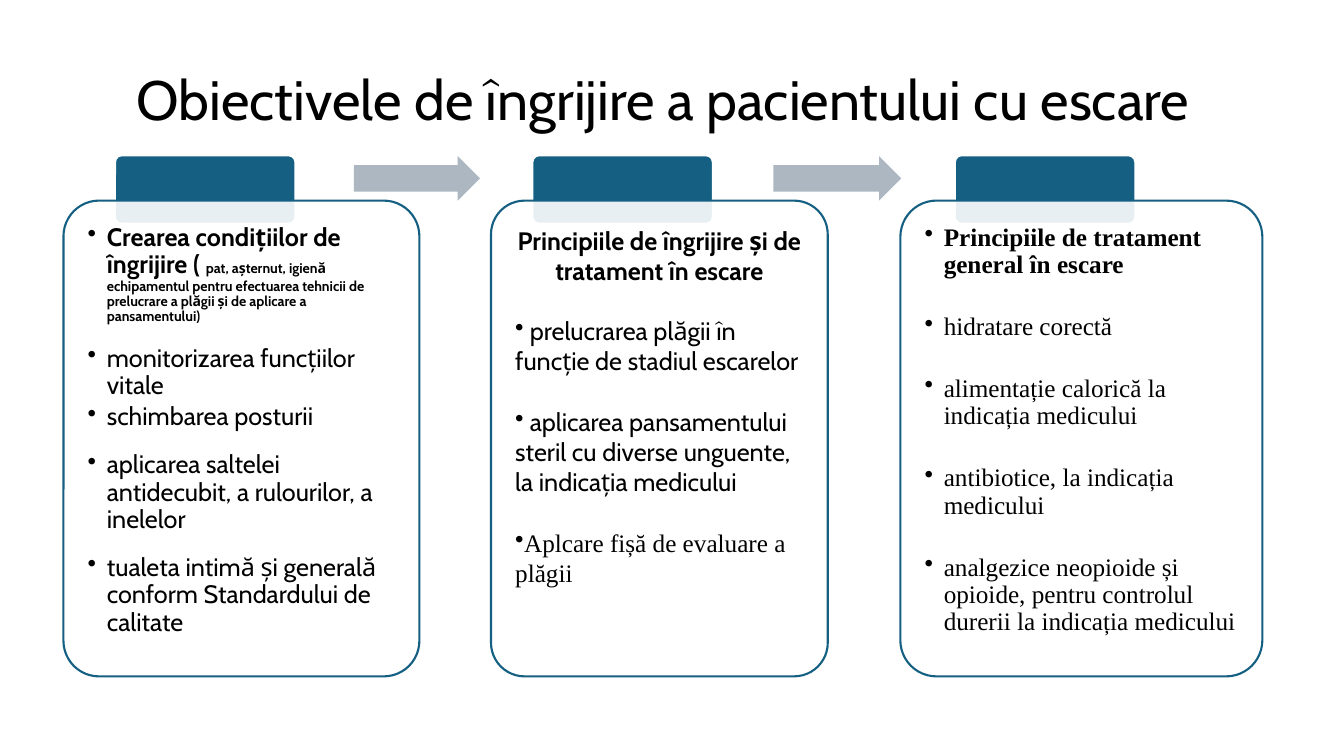
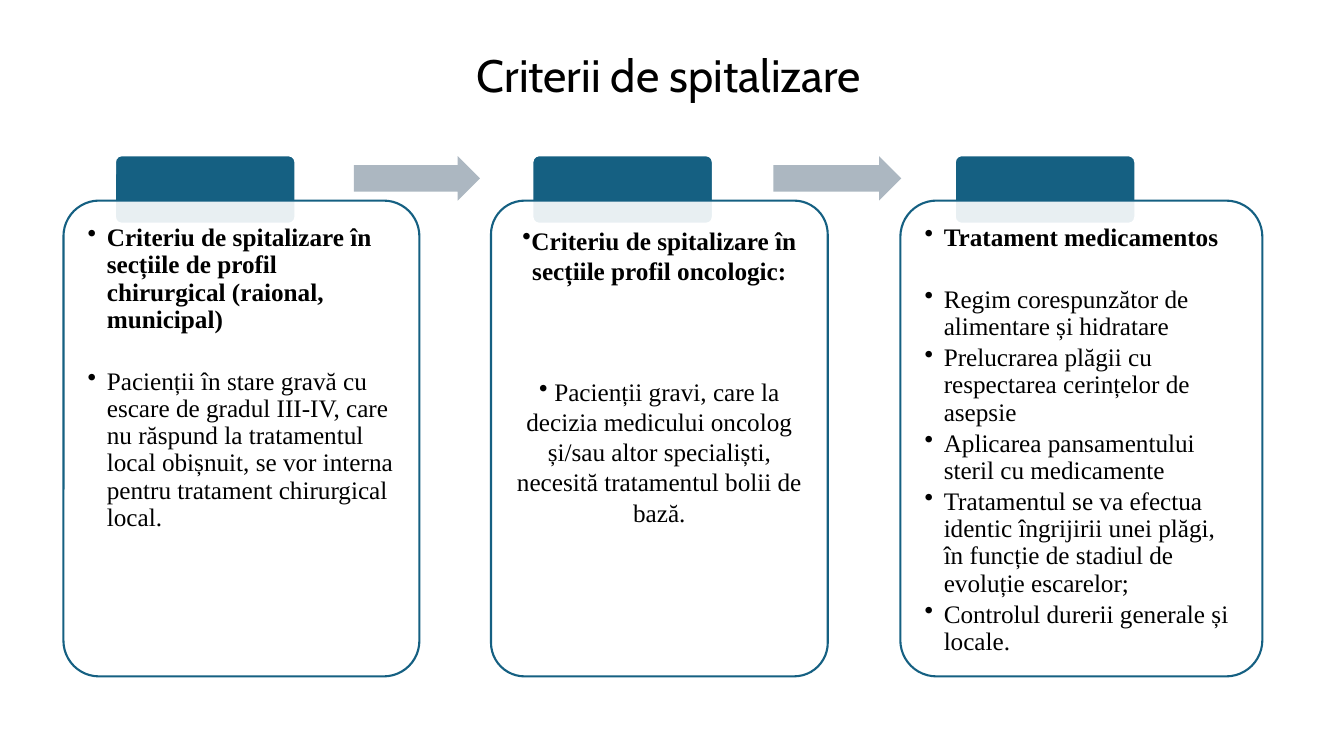
"""Build two slides on pressure ulcer care, each a row of three linked cards."""
from dataclasses import dataclass
from typing import Any

import pptx
import pptx.dml.color
import pptx.enum.shapes
import pptx.enum.text
import pptx.oxml
import pptx.oxml.ns
import pptx.shapes.autoshape
import pptx.slide
import pptx.text.text
import pptx.util

EMU_PER_PX = 9144
COLORS = {"text": "000000", "teal": "156082", "card": "FFFFFF", "arrow": "ACB7C1"}
SANS, SERIF = "Cabin", "Times New Roman"
LEFT = pptx.enum.text.PP_ALIGN.LEFT
CENTER = pptx.enum.text.PP_ALIGN.CENTER
PRESET = pptx.enum.shapes.MSO_SHAPE

CARD_TOP, CARD_HEIGHT, CARD_PADDING = 199, 472, 10
TAB_TOP, TAB_WIDTH, TAB_HEIGHT = 154, 179, 68
ARROW_TOP, ARROW_HEIGHT = 155, 44
TITLE_WIDTH, TITLE_HEIGHT = 1095, 80
BODY_SIZE, DETAIL_SIZE = 18, 10
TIGHT, SHORT_GAP, LINE_GAP, WIDE_GAP = 2.7, 15, 24.8, 64.8
INLINE_GAP = 21.6


@dataclass(frozen=True)
class Phrase:
    text: str
    font: str = SERIF
    bold: bool = False
    size: float = BODY_SIZE


@dataclass(frozen=True)
class Entry:
    phrases: tuple[Phrase, ...]
    gap: float = 0
    align: Any = LEFT
    bullet: bool = True


@dataclass(frozen=True)
class Column:
    card_left: int
    card_width: int
    tab_left: int
    hanging: int
    line_spacing: float


@dataclass(frozen=True)
class Arrow:
    left: int
    width: int


@dataclass(frozen=True)
class Topic:
    title: Phrase
    title_left: int
    title_top: int
    cards: tuple[tuple[Entry, ...], ...]


COLUMNS = (
    Column(63, 353, 114, 19, 0.9),
    Column(487, 334, 528, 0, 1.0),
    Column(893, 359, 947, 19, 0.9),
)
ARROWS = (Arrow(351, 125), Arrow(767, 127))


def heading(text: str, font: str = SERIF, align: Any = LEFT, bullet: bool = True) -> Entry:
    return Entry((Phrase(text, font, True),), align=align, bullet=bullet)


def item(text: str, gap: float, font: str = SERIF, align: Any = LEFT) -> Entry:
    return Entry((Phrase(text, font),), gap, align)


TOPICS = (
    Topic(
        Phrase("Obiectivele de îngrijire a pacientului cu escare", SANS, size=39.6),
        110, 62,
        (
            (
                Entry((
                    Phrase("Crearea condițiilor de îngrijire ( ", SANS, True),
                    Phrase("pat, așternut, igienă echipamentul pentru efectuarea tehnicii "
                           "de prelucrare a plăgii și de aplicare a pansamentului)",
                           SANS, True, DETAIL_SIZE),
                )),
                item("monitorizarea funcțiilor vitale", SHORT_GAP, SANS),
                item("schimbarea posturii", TIGHT, SANS),
                item("aplicarea saltelei antidecubit, a rulourilor, a inelelor",
                     SHORT_GAP, SANS),
                item("tualeta intimă și generală conform Standardului de calitate",
                     SHORT_GAP, SANS),
            ),
            (
                heading("Principiile de îngrijire și de tratament în escare",
                        SANS, CENTER, False),
                item(" prelucrarea plăgii în funcție de stadiul escarelor",
                     INLINE_GAP, SANS),
                item(" aplicarea pansamentului steril cu diverse unguente, "
                     "la indicația medicului", INLINE_GAP, SANS),
                item("Aplcare fișă de evaluare a plăgii", INLINE_GAP),
            ),
            (
                heading("Principiile de tratament general în escare"),
                item("hidratare corectă", LINE_GAP),
                item("alimentație calorică la indicația medicului", LINE_GAP),
                item("antibiotice, la indicația medicului", LINE_GAP),
                item("analgezice neopioide și opioide, pentru controlul durerii "
                     "la indicația medicului", LINE_GAP),
            ),
        ),
    ),
    Topic(
        Phrase("Criterii de spitalizare", SANS, size=32.4),
        116, 37,
        (
            (
                heading("Criteriu de spitalizare în secțiile de profil chirurgical "
                        "(raional, municipal)"),
                item("Pacienții în stare gravă cu escare de gradul III-IV, care nu "
                     "răspund la tratamentul local obișnuit, se vor interna pentru "
                     "tratament chirurgical local.", LINE_GAP),
            ),
            (
                heading("Criteriu de spitalizare în secțiile profil oncologic:",
                        align=CENTER),
                item(" Pacienții gravi, care la decizia medicului oncolog și/sau altor "
                     "specialiști, necesită tratamentul bolii de bază.",
                     WIDE_GAP, align=CENTER),
            ),
            (
                heading("Tratament medicamentos"),
                item("Regim corespunzător de alimentare și hidratare", LINE_GAP),
                item("Prelucrarea plăgii cu respectarea cerințelor de asepsie", TIGHT),
                item("Aplicarea pansamentului steril cu medicamente", TIGHT),
                item("Tratamentul se va efectua identic îngrijirii unei plăgi, în "
                     "funcție de stadiul de evoluție escarelor;", TIGHT),
                item("Controlul durerii generale și locale.", TIGHT),
            ),
        ),
    ),
)


def px(length: int) -> pptx.util.Emu:
    return pptx.util.Emu(length * EMU_PER_PX)


def rgb(name: str) -> pptx.dml.color.RGBColor:
    return pptx.dml.color.RGBColor.from_string(COLORS[name])


def apply(target: Any, formats: dict[str, Any]) -> None:
    for attribute, value in formats.items():
        setattr(target, attribute, value)


def add_panel(slide: pptx.slide.Slide, preset: Any, box: tuple[int, int, int, int],
              fill: str, line: str | None,
              adjustments: tuple[float, ...]) -> pptx.shapes.autoshape.Shape:
    panel = slide.shapes.add_shape(preset, *map(px, box))
    panel.shadow.inherit = False
    panel.fill.solid()
    panel.fill.fore_color.rgb = rgb(fill)
    for index, value in enumerate(adjustments):
        panel.adjustments[index] = value
    if line:
        panel.line.color.rgb = rgb(line)
        panel.line.width = pptx.util.Pt(1.5)
    else:
        panel.line.fill.background()
    return panel


def set_opacity(panel: pptx.shapes.autoshape.Shape, percent: int) -> None:
    color = panel.fill._xPr.find(".//" + pptx.oxml.ns.qn("a:srgbClr"))
    alpha = pptx.oxml.parse_xml(
        f'<a:alpha {pptx.oxml.ns.nsdecls("a")} val="{percent * 1000}"/>')
    color.append(alpha)


def add_bullet(paragraph: pptx.text.text._Paragraph, hanging: int) -> None:
    properties = paragraph._p.get_or_add_pPr()
    properties.set("marL", str(px(hanging)))
    properties.set("indent", str(-px(hanging)))
    properties.append(pptx.oxml.parse_xml(
        f'<a:buChar {pptx.oxml.ns.nsdecls("a")} char="•"/>'))


def add_text(slide: pptx.slide.Slide, box: tuple[int, int, int, int],
             entries: tuple[Entry, ...], anchor: Any, margin: int,
             hanging: int, line_spacing: float) -> None:
    frame = slide.shapes.add_textbox(*map(px, box)).text_frame
    sides = ("margin_left", "margin_top", "margin_right", "margin_bottom")
    apply(frame, {"word_wrap": True, "vertical_anchor": anchor,
                  **dict.fromkeys(sides, px(margin))})
    for index, entry in enumerate(entries):
        paragraph = frame.add_paragraph() if index else frame.paragraphs[0]
        if entry.bullet:
            add_bullet(paragraph, hanging)
        apply(paragraph, {"alignment": entry.align, "line_spacing": line_spacing})
        if entry.gap:
            paragraph.space_before = pptx.util.Pt(entry.gap)
        for phrase in entry.phrases:
            run = paragraph.add_run()
            run.text = phrase.text
            apply(run.font, {"name": phrase.font, "bold": phrase.bold,
                             "size": pptx.util.Pt(phrase.size)})
            run.font.color.rgb = rgb("text")


def add_card(slide: pptx.slide.Slide, column: Column, entries: tuple[Entry, ...]) -> None:
    add_panel(slide, PRESET.ROUNDED_RECTANGLE,
              (column.tab_left, TAB_TOP, TAB_WIDTH, TAB_HEIGHT), "teal", "card", (0.1,))
    card = add_panel(slide, PRESET.ROUNDED_RECTANGLE,
                     (column.card_left, CARD_TOP, column.card_width, CARD_HEIGHT),
                     "card", "teal", (0.1,))
    set_opacity(card, 90)
    text_box = (column.card_left + CARD_PADDING, CARD_TOP + CARD_PADDING,
                column.card_width - 2 * CARD_PADDING, CARD_HEIGHT - 2 * CARD_PADDING)
    add_text(slide, text_box, entries, pptx.enum.text.MSO_ANCHOR.TOP, 14,
             column.hanging, column.line_spacing)


def add_topic(deck: Any, topic: Topic) -> None:
    slide = deck.slides.add_slide(deck.slide_layouts[6])
    title = Entry((topic.title,), align=CENTER, bullet=False)
    add_text(slide, (topic.title_left, topic.title_top, TITLE_WIDTH, TITLE_HEIGHT),
             (title,), pptx.enum.text.MSO_ANCHOR.MIDDLE, 0, 0, 0.9)
    for column, entries in zip(COLUMNS, topic.cards):
        add_card(slide, column, entries)
    for arrow in ARROWS:
        add_panel(slide, PRESET.RIGHT_ARROW,
                  (arrow.left, ARROW_TOP, arrow.width, ARROW_HEIGHT),
                  "arrow", None, (0.6, 0.5))


def main() -> None:
    deck = pptx.Presentation()
    apply(deck, {"slide_width": px(1333), "slide_height": px(750)})
    for topic in TOPICS:
        add_topic(deck, topic)
    deck.save("out.pptx")


if __name__ == "__main__":
    main()
